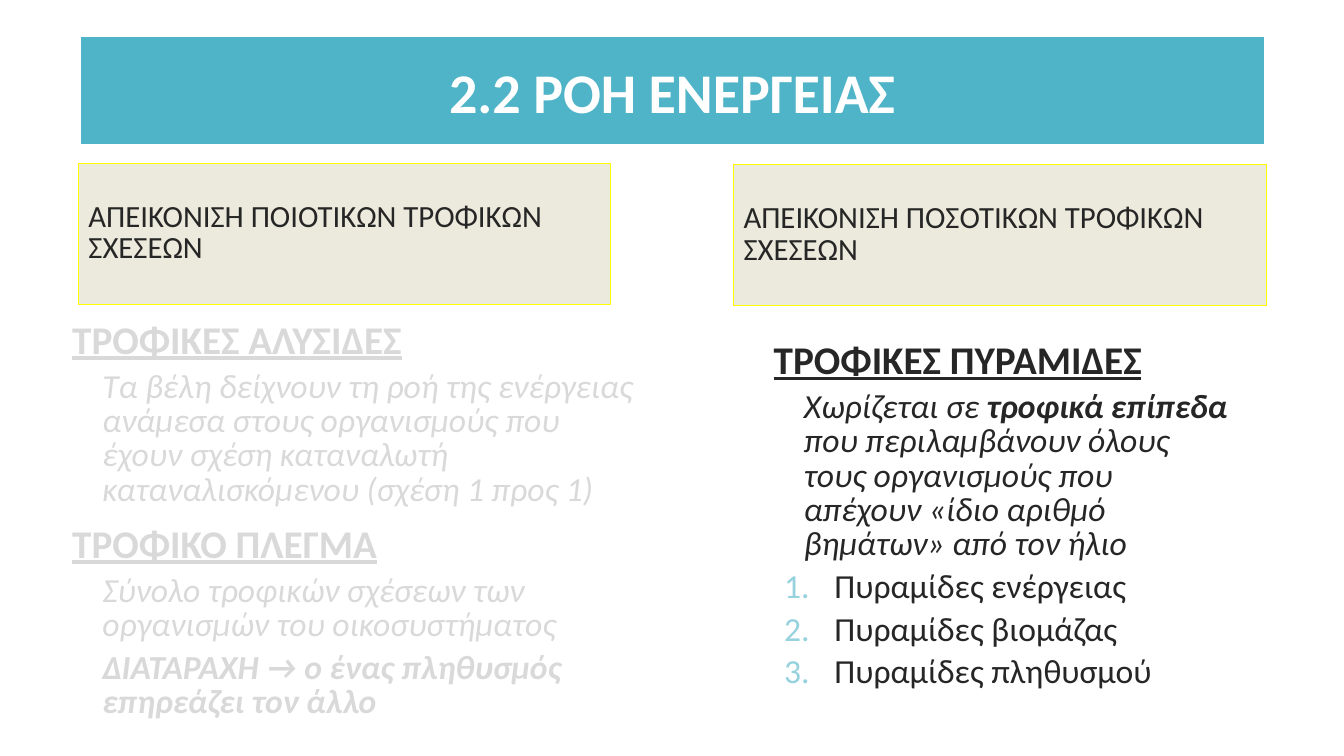
from dataclasses import dataclass

from lxml.etree import SubElement
from pptx import Presentation
from pptx.dml.color import RGBColor
from pptx.enum.shapes import MSO_SHAPE
from pptx.enum.text import MSO_ANCHOR, PP_ALIGN
from pptx.oxml.ns import qn
from pptx.util import Cm, Pt


@dataclass(frozen=True)
class Theme:
    """Colours, font and type sizes of the slide."""
    font: str = "Calibri"
    banner: str = "50B4C8"
    panel: str = "ECEADC"
    panel_edge: str = "FFFF00"
    white: str = "FFFFFF"
    ink: str = "262626"
    faded: str = "D9D9D9"
    marker: str = "96D2DE"
    title_size: int = 40
    heading_size: int = 28
    body_size: int = 24
    label_size: int = 22


LAYOUT = {
    "heading": dict(level=0, margin=0.76, hang=0.76, before=13),
    "detail": dict(level=1, margin=1.52, hang=0.51, before=6),
    "number": dict(level=1, margin=2.29, hang=1.27, before=6),
}


def write(paragraph, text, *, font, size, color, bold=False, italic=False, underline=False):
    """Add a formatted run to a paragraph."""
    run = paragraph.add_run()
    run.text = text
    run.font.name = font
    run.font.size = Pt(size)
    run.font.color.rgb = RGBColor.from_string(color)
    run.font.bold = bold
    run.font.italic = italic
    run.font.underline = underline


class SlideBuilder:
    """Draws styled elements on the current slide."""

    def __init__(self, slide, theme):
        self.slide = slide
        self.theme = theme

    def block(self, box, text, *, fill, edge, edge_width, size, color, align, spacing=1.0, bold=False):
        """Draw a filled rectangle with one paragraph."""
        panel = self.slide.shapes.add_shape(MSO_SHAPE.RECTANGLE, *map(Cm, box))
        panel.shadow.inherit = False
        panel.fill.solid()
        panel.fill.fore_color.rgb = RGBColor.from_string(fill)
        panel.line.color.rgb = RGBColor.from_string(edge)
        panel.line.width = Pt(edge_width)
        panel.text_frame.word_wrap = True
        panel.text_frame.vertical_anchor = MSO_ANCHOR.MIDDLE
        paragraph = panel.text_frame.paragraphs[0]
        paragraph.alignment = align
        paragraph.line_spacing = spacing
        write(paragraph, text, font=self.theme.font, size=size, color=color, bold=bold)

    def banner(self, box, text):
        """Draw the title bar."""
        theme = self.theme
        self.block(box, text, fill=theme.banner, edge=theme.white, edge_width=3,
                   size=theme.title_size, color=theme.white, align=PP_ALIGN.CENTER, bold=True)

    def label(self, box, text):
        """Draw a column label."""
        theme = self.theme
        self.block(box, text, fill=theme.panel, edge=theme.panel_edge, edge_width=0.75,
                   size=theme.label_size, color=theme.ink, align=PP_ALIGN.LEFT, spacing=0.85)

    def marker(self, paragraph, kind):
        """Set the indents and the marker of a paragraph."""
        layout = LAYOUT[kind]
        paragraph.level = layout["level"]
        properties = paragraph._p.get_or_add_pPr()
        properties.set("marL", str(Cm(layout["margin"])))
        properties.set("indent", str(-Cm(layout["hang"])))
        tint = SubElement(properties, qn("a:buClr"))
        SubElement(tint, qn("a:srgbClr"), val=self.theme.marker)
        if kind == "number":
            SubElement(properties, qn("a:buAutoNum"), type="arabicPeriod")
        else:
            SubElement(properties, qn("a:buChar"), char=" ")

    def outline(self, box, entries, color):
        """Draw a column of headings, details and numbered items."""
        theme = self.theme
        frame = self.slide.shapes.add_textbox(*map(Cm, box)).text_frame
        frame.word_wrap = True
        for index, (kind, *pieces) in enumerate(entries):
            paragraph = frame.add_paragraph() if index else frame.paragraphs[0]
            self.marker(paragraph, kind)
            paragraph.line_spacing = 0.85
            paragraph.space_before = Pt(LAYOUT[kind]["before"] if index else 0)
            heading = kind == "heading"
            for text, bold in pieces:
                write(paragraph, text, font=theme.font, color=color, bold=bold,
                      size=theme.heading_size if heading else theme.body_size,
                      italic=kind == "detail", underline=heading)


QUALITATIVE = [
    ("heading", ("ΤΡΟΦΙΚΕΣ ΑΛΥΣΙΔΕΣ", True)),
    ("detail", ("Τα βέλη δείχνουν τη ροή της ενέργειας ανάμεσα στους οργανισμούς που "
                "έχουν σχέση καταναλωτή καταναλισκόμενου (σχέση 1 προς 1)", False)),
    ("heading", ("ΤΡΟΦΙΚΟ ΠΛΕΓΜΑ", True)),
    ("detail", ("Σύνολο τροφικών σχέσεων των οργανισμών του οικοσυστήματος", False)),
    ("detail", ("ΔΙΑΤΑΡΑΧΗ → ο ένας πληθυσμός επηρεάζει τον άλλο", True)),
]
QUANTITATIVE = [
    ("heading", ("ΤΡΟΦΙΚΕΣ ΠΥΡΑΜΙΔΕΣ", True)),
    ("detail", ("Χωρίζεται σε ", False), ("τροφικά επίπεδα ", True),
     ("που περιλαμβάνουν όλους τους οργανισμούς που απέχουν "
      "«ίδιο αριθμό βημάτων» από τον ήλιο", False)),
    *(("number", (f"Πυραμίδες {measure}", False))
      for measure in ("ενέργειας", "βιομάζας", "πληθυσμού")),
]


def main():
    """Build and save the slide."""
    deck = Presentation()
    deck.slide_width, deck.slide_height = Cm(33.87), Cm(19.05)
    theme = Theme()
    builder = SlideBuilder(deck.slides.add_slide(deck.slide_layouts[6]), theme)
    builder.label((1.98, 4.11, 13.41, 3.56), "ΑΠΕΙΚΟΝΙΣΗ ΠΟΙΟΤΙΚΩΝ ΤΡΟΦΙΚΩΝ ΣΧΕΣΕΩΝ")
    builder.outline((0.81, 8, 15.72, 10.52), QUALITATIVE, theme.faded)
    builder.label((18.49, 4.14, 13.44, 3.56), "ΑΠΕΙΚΟΝΙΣΗ ΠΟΣΟΤΙΚΩΝ ΤΡΟΦΙΚΩΝ ΣΧΕΣΕΩΝ")
    builder.outline((18.49, 8.51, 12.95, 8.89), QUANTITATIVE, theme.ink)
    builder.banner((1.98, 0.89, 29.92, 2.79), "2.2 ΡΟΗ ΕΝΕΡΓΕΙΑΣ")
    deck.save("out.pptx")


if __name__ == "__main__":
    main()
